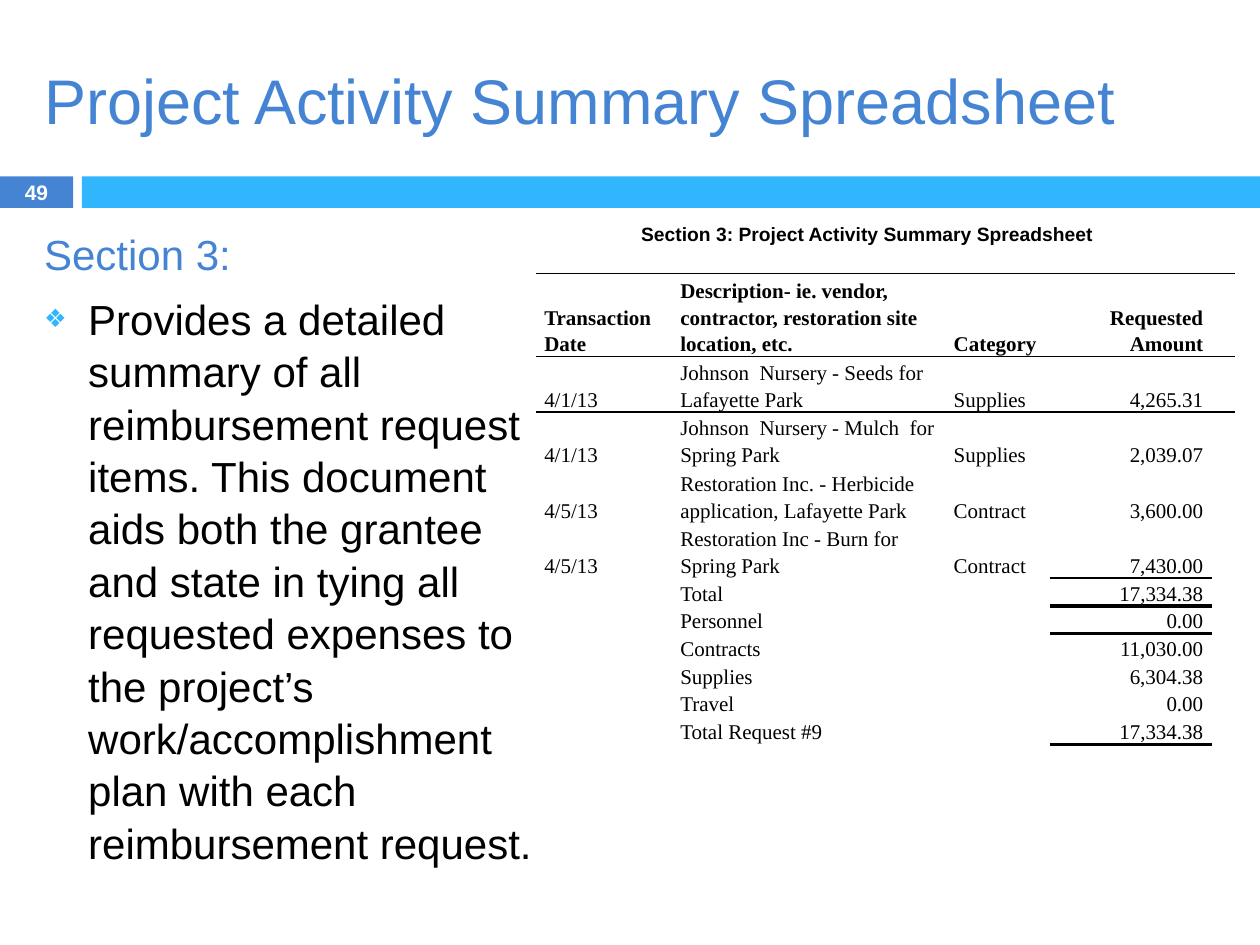
"""Builds the project activity summary slide."""
import pptx
import pptx.util
import pptx.dml.color
import pptx.enum.shapes
import pptx.enum.text
import pptx.oxml
import pptx.oxml.ns

Inches, Pt = pptx.util.Inches, pptx.util.Pt
ALIGN = pptx.enum.text.PP_ALIGN
ANCHOR = pptx.enum.text.MSO_ANCHOR
BLUE, SKY, BLACK, WHITE = "4584D3", "31B6FD", "000000", "FFFFFF"
SERIF = "Times New Roman"
NS = pptx.oxml.ns.nsdecls("a")

TITLE = "Project Activity Summary Spreadsheet"
HEAD = "Section 3:"
BODY = (
    "Provides a detailed summary of all reimbursement request items. "
    "This document aids both the grantee and state in tying all requested "
    "expenses to the project’s work/accomplishment plan with each "
    "reimbursement request."
)
ROWS = [
    ("Transaction Date", "Description- ie. vendor, contractor, restoration site location, etc.",
     "Category", "Requested Amount", ""),
    ("4/1/13", "Johnson  Nursery - Seeds for Lafayette Park", "Supplies", "4,265.31", ""),
    ("4/1/13", "Johnson  Nursery - Mulch  for Spring Park", "Supplies", "2,039.07", ""),
    ("4/5/13", "Restoration Inc. - Herbicide application, Lafayette Park", "Contract", "3,600.00", ""),
    ("4/5/13", "Restoration Inc - Burn for Spring Park", "Contract", "7,430.00", ""),
    ("", "Total", "", "17,334.38", ""),
    ("", "Personnel", "", "0.00", ""),
    ("", "Contracts", "", "11,030.00", ""),
    ("", "Supplies", "", "6,304.38", ""),
    ("", "Travel", "", "0.00", ""),
    ("", "Total Request #9", "", "17,334.38", ""),
]
WIDTHS = [1.08, 2.17, 0.83, 1.29, 0.18]
HEIGHTS = [0.66] + [0.44] * 4 + [0.22] * 6
AMOUNT = 3
RULES = {(0, col): 1 for col in range(5)} | {
    (1, col): 1 for col in range(5)} | {
    (5, AMOUNT): 1, (6, AMOUNT): 2.25, (11, AMOUNT): 2.25}


def color(code):
    return pptx.dml.color.RGBColor.from_string(code)


def box(place):
    return [Inches(n) for n in place]


def put(para, text, size=12, font="Arial", ink=BLACK, bold=False,
        align=ALIGN.LEFT, line=None, before=0):
    para.alignment = align
    para.space_before = Pt(before)
    if line:
        para.line_spacing = line
    if not text:
        para._p.get_or_add_endParaRPr().set("sz", str(size * 100))
        return
    run = para.add_run()
    run.text = text
    run.font.size, run.font.name, run.font.bold = Pt(size), font, bold
    run.font.color.rgb = color(ink)


def move(shape, place):
    shape.left, shape.top, shape.width, shape.height = box(place)
    frame = shape.text_frame
    frame.word_wrap = True
    frame.auto_size = pptx.enum.text.MSO_AUTO_SIZE.NONE
    return frame


def bar(slide, place, fill):
    shape = slide.shapes.add_shape(pptx.enum.shapes.MSO_SHAPE.RECTANGLE, *box(place))
    shape.shadow.inherit = False
    shape.fill.solid()
    shape.fill.fore_color.rgb = color(fill)
    shape.line.fill.background()


def label(slide, place, text, **look):
    frame = move(slide.shapes.add_textbox(*box(place)), place)
    frame.vertical_anchor = ANCHOR.MIDDLE
    put(frame.paragraphs[0], text, **look)


def bullet(para, left, marks):
    props = para._p.get_or_add_pPr()
    props.set("marL", str(Inches(left)))
    props.set("indent", str(-Inches(left)))
    for mark in marks:
        props.append(pptx.oxml.parse_xml(mark))


def border(cell, side, width):
    cell._tc.get_or_add_tcPr().append(pptx.oxml.parse_xml(
        f'<a:{side} {NS} w="{Pt(width)}"><a:solidFill><a:srgbClr val="{BLACK}"/>'
        f'</a:solidFill></a:{side}>'))


def grid(slide):
    place = box((4.25, 2.17, sum(WIDTHS), sum(HEIGHTS)))
    table = slide.shapes.add_table(len(ROWS), len(WIDTHS), *place).table
    table.first_row = table.horz_banding = False
    style = table._tbl.tblPr.find(pptx.oxml.ns.qn("a:tableStyleId"))
    style.text = "{2D5ABB26-0587-4C30-8999-92F81FD0307C}"
    for col, width in zip(table.columns, WIDTHS):
        col.width = Inches(width)
    for row, height in zip(table.rows, HEIGHTS):
        row.height = Inches(height)
    for r, texts in enumerate(ROWS):
        for c, text in enumerate(texts):
            cell = table.cell(r, c)
            cell.margin_left = cell.margin_right = Inches(0.07)
            cell.margin_top = cell.margin_bottom = 0
            cell.vertical_anchor = ANCHOR.BOTTOM
            for side, edge in (("lnT", r), ("lnB", r + 1)):
                if (edge, c) in RULES:
                    border(cell, side, RULES[edge, c])
            cell.fill.background()
            put(cell.text_frame.paragraphs[0], text, font=SERIF, bold=r == 0,
                align=ALIGN.RIGHT if c == AMOUNT else ALIGN.LEFT, line=1.15)


def main():
    deck = pptx.Presentation()
    deck.slide_width, deck.slide_height = Inches(10), Inches(7.5)
    slide = deck.slides.add_slide(deck.slide_layouts[1])
    bar(slide, (0, 1.4, 0.58, 0.25), BLUE)
    bar(slide, (0.65, 1.4, 9.35, 0.25), SKY)
    grid(slide)
    label(slide, (4.99, 1.71, 3.92, 0.29),
          "Section 3: Project Activity Summary Spreadsheet", size=11, bold=True)

    body = move(slide.placeholders[1], (0.25, 1.75, 4.08, 5.5))
    look = dict(size=24, line=1.04, before=7)
    put(body.paragraphs[0], HEAD, ink=BLUE, **look)
    bullet(body.paragraphs[0], 0, [f"<a:buNone {NS}/>"])
    item = body.add_paragraph()
    put(item, BODY, **look)
    bullet(item, 0.35, [
        f'<a:buClr {NS}><a:srgbClr val="{SKY}"/></a:buClr>',
        f'<a:buSzPct {NS} val="60000"/>',
        f'<a:buFont {NS} typeface="Arial"/>',
        f'<a:buChar {NS} char="❖"/>'])

    title = move(slide.shapes.title, (0.25, 0.25, 9.34, 1.08))
    title.vertical_anchor = ANCHOR.MIDDLE
    put(title.paragraphs[0], TITLE, size=36, ink=BLUE)
    label(slide, (0, 1.39, 0.58, 0.27), "49", ink=WHITE, bold=True, align=ALIGN.CENTER)
    deck.save("out.pptx")


if __name__ == "__main__":
    main()
